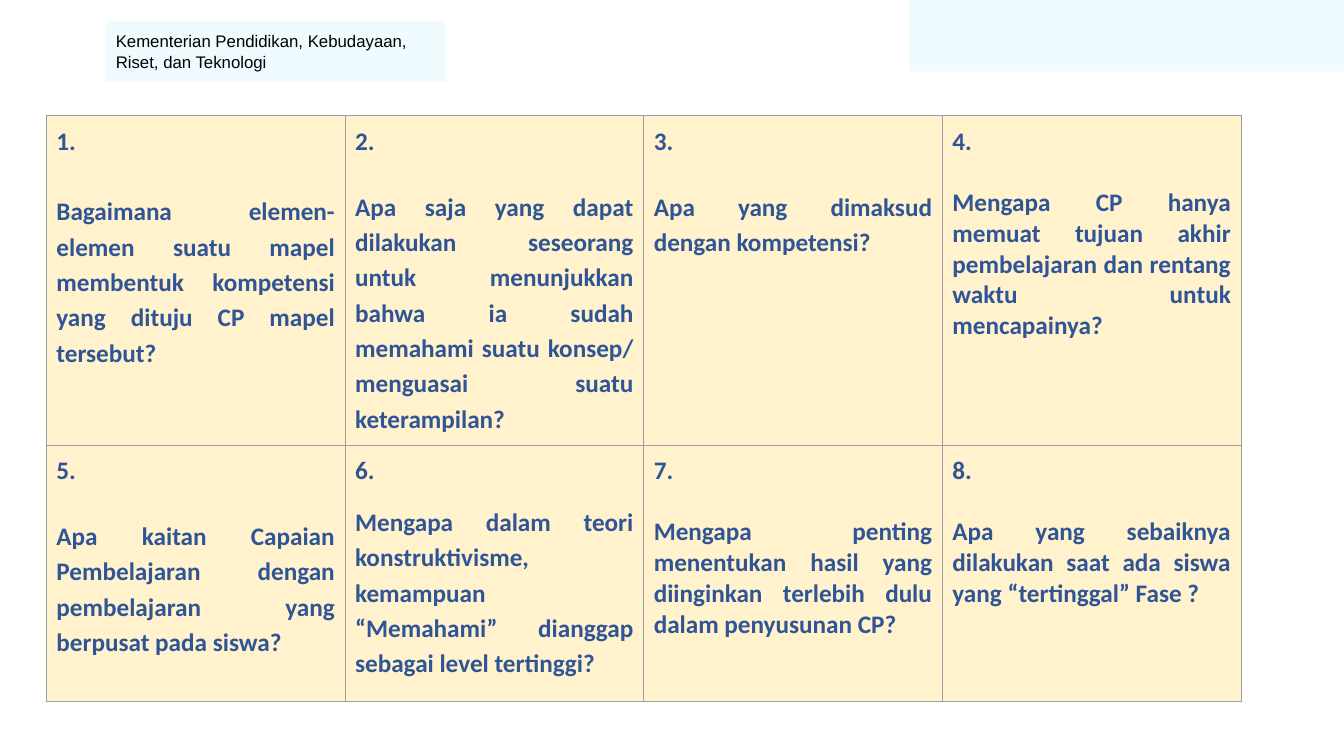
from lxml import etree
from pptx import Presentation
from pptx import util as u
from pptx.dml.color import RGBColor
from pptx.enum import shapes, text
from pptx.oxml import ns

COLORS = {"band": "F0FBFF", "cell": "FFF2CC", "border": "9E9E9E",
          "question": "2F5597", "header": "000000"}

QUESTIONS = [
    ("Bagaimana elemen-elemen suatu mapel membentuk kompetensi yang dituju CP mapel tersebut?", 1.15, 25.3),
    ("Apa saja yang dapat dilakukan seseorang untuk menunjukkan bahwa ia sudah memahami suatu konsep/ menguasai suatu keterampilan?", 1.15, 22),
    ("Apa yang dimaksud dengan kompetensi?", 1.15, 22),
    ("Mengapa CP hanya memuat tujuan akhir pembelajaran dan rentang waktu untuk mencapainya?", 1, 22),
    ("Apa kaitan Capaian Pembelajaran dengan pembelajaran yang berpusat pada siswa?", 1.15, 22),
    ("Mengapa dalam teori konstruktivisme, kemampuan “Memahami” dianggap sebagai level tertinggi?", 1.15, 12),
    ("Mengapa penting menentukan hasil yang diinginkan terlebih dulu dalam penyusunan CP?", 1, 22),
    ("Apa yang sebaiknya dilakukan saat ada siswa yang “tertinggal” Fase ?", 1, 22),
]


def color(name):
    return RGBColor.from_string(COLORS[name])


def write(p, content, size=18, font="Calibri", fill="question", bold=False,
          align=text.PP_ALIGN.LEFT, spacing=1, before=None):
    p.alignment = align
    p.line_spacing = spacing
    if before is not None:
        p.space_before = u.Pt(before)
    r = p.add_run()
    r.text = content
    r.font.size = u.Pt(size)
    r.font.name = font
    r.font.bold = bold
    r.font.color.rgb = color(fill)


def add_band(s, left, top, width, height):
    sp = s.shapes.add_shape(shapes.MSO_SHAPE.RECTANGLE, u.Inches(left), u.Inches(top),
                            u.Inches(width), u.Inches(height))
    sp.shadow.inherit = False
    sp.fill.solid()
    sp.fill.fore_color.rgb = color("band")
    sp.line.fill.background()
    return sp


def add_header(s, left, top, width, height):
    tf = add_band(s, left, top, width, height).text_frame
    tf.word_wrap = True
    tf.vertical_anchor = text.MSO_ANCHOR.MIDDLE
    tf.margin_left = tf.margin_right = tf.margin_top = tf.margin_bottom = u.Inches(0.1)
    write(tf.paragraphs[0], "Kementerian Pendidikan, Kebudayaan, Riset, dan Teknologi",
          size=12, font="Arial", fill="header")


def add_borders(cell):
    props = cell._tc.get_or_add_tcPr()
    for side in ("lnL", "lnR", "lnT", "lnB"):
        ln = etree.SubElement(props, ns.qn(f"a:{side}"), w=str(u.Pt(0.75)))
        fill = etree.SubElement(ln, ns.qn("a:solidFill"))
        etree.SubElement(fill, ns.qn("a:srgbClr"), val=COLORS["border"])


def fill_cell(cell, number, question, spacing, gap):
    add_borders(cell)
    cell.fill.solid()
    cell.fill.fore_color.rgb = color("cell")
    cell.margin_left = cell.margin_right = u.Inches(0.1)
    cell.margin_top = cell.margin_bottom = u.Inches(0.1)
    tf = cell.text_frame
    style = {"bold": True, "align": text.PP_ALIGN.JUSTIFY}
    write(tf.paragraphs[0], f"{number}.", **style)
    write(tf.add_paragraph(), question, spacing=spacing, before=gap, **style)


def add_questions(s, left, top, width, row_heights, columns=4):
    table = s.shapes.add_table(len(row_heights), columns, u.Inches(left), u.Inches(top),
                               u.Inches(width), u.Inches(sum(row_heights))).table
    table.first_row = table.horz_banding = False
    for column in table.columns:
        column.width = u.Inches(width / columns)
    for row, height in zip(table.rows, row_heights):
        row.height = u.Inches(height)
    for i, (question, spacing, gap) in enumerate(QUESTIONS):
        fill_cell(table.cell(*divmod(i, columns)), i + 1, question, spacing, gap)


def main():
    prs = Presentation()
    prs.slide_width = u.Inches(13.33)
    prs.slide_height = u.Inches(7.5)
    s = prs.slides.add_slide(prs.slide_layouts[6])
    add_band(s, 9.02, 0, 4.31, 0.71)
    add_header(s, 1.05, 0.21, 3.37, 0.6)
    add_questions(s, 0.46, 1.15, 11.85, (3.21, 2.54))
    prs.save("out.pptx")


if __name__ == "__main__":
    main()
